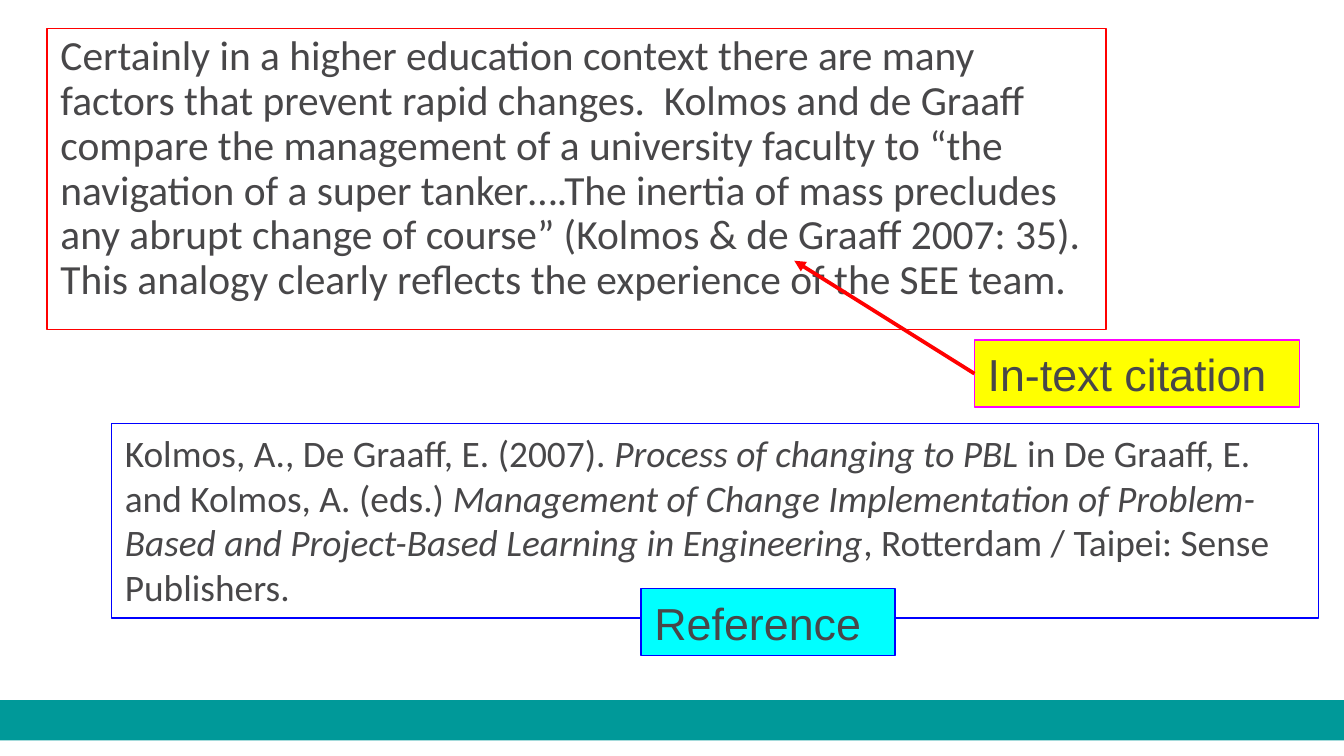
"""Build a slide that contrasts an in-text citation with its full reference."""
from dataclasses import dataclass
from typing import Optional

from lxml import etree
from pptx import Presentation
from pptx import util as u
from pptx.dml.color import RGBColor
from pptx.enum import shapes, text
from pptx.oxml import ns

TEAL = RGBColor(0x00, 0x99, 0x99)
RED = RGBColor(0xFF, 0x00, 0x00)
BLUE = RGBColor(0x00, 0x00, 0xFF)
YELLOW = RGBColor(0xFF, 0xFF, 0x00)
MAGENTA = RGBColor(0xFF, 0x00, 0xFF)
CYAN = RGBColor(0x00, 0xFF, 0xFF)
GREY = RGBColor(0x48, 0x47, 0x49)

QUOTATION = (
    "Certainly in a higher education context there are many factors that prevent "
    "rapid changes.  Kolmos and de Graaff compare the management of a university "
    "faculty to “the navigation of a super tanker….The inertia of mass precludes "
    "any abrupt change of course” (Kolmos & de Graaff 2007: 35).  This analogy "
    "clearly reflects the experience of the SEE team."
)


@dataclass(frozen=True)
class Span:
    words: str
    italic: bool = False


@dataclass(frozen=True)
class Panel:
    left: float
    top: float
    width: float
    height: float
    spans: tuple[Span, ...]
    font: str
    size: float
    outline: RGBColor
    fill: Optional[RGBColor] = None
    line_spacing: float = 1.0


QUOTE = Panel(0.35, 0.21, 7.88, 2.24, (Span(QUOTATION),), "Calibri", 22.2, RED,
              line_spacing=0.9)
REFERENCE = Panel(0.83, 3.15, 8.98, 1.45, (
    Span("Kolmos, A., De Graaff, E. (2007). "),
    Span("Process of changing to PBL ", italic=True),
    Span("in De Graaff, E. and Kolmos, A. (eds.) "),
    Span("Management of Change Implementation of Problem-Based and "
         "Project-Based Learning in Engineering", italic=True),
    Span(", Rotterdam / Taipei: Sense Publishers."),
), "Calibri", 20, BLUE)
CITATION_LABEL = Panel(7.25, 2.53, 2.42, 0.5, (Span("In-text citation"),),
                       "Arial", 24, MAGENTA, YELLOW)
REFERENCE_LABEL = Panel(4.77, 4.38, 1.89, 0.5, (Span("Reference"),),
                        "Arial", 24, BLUE, CYAN)


def add_span(para, words: str, *, font: str, size: float, italic: bool) -> None:
    run = para.add_run()
    run.text = words
    run.font.name = font
    run.font.size = u.Pt(size)
    run.font.italic = italic
    run.font.color.rgb = GREY


def format_panel(box, panel: Panel) -> None:
    box.left, box.top = u.Inches(panel.left), u.Inches(panel.top)
    box.width, box.height = u.Inches(panel.width), u.Inches(panel.height)
    box.line.color.rgb = panel.outline
    box.line.width = u.Pt(0.75)
    if panel.fill is not None:
        box.fill.solid()
        box.fill.fore_color.rgb = panel.fill
    frame = box.text_frame
    frame.word_wrap = True
    frame.auto_size = text.MSO_AUTO_SIZE.NONE
    frame.vertical_anchor = text.MSO_ANCHOR.TOP
    para = frame.paragraphs[0]
    para.alignment = text.PP_ALIGN.LEFT
    para.line_spacing = panel.line_spacing
    para.space_before = u.Pt(0)
    for span in panel.spans:
        add_span(para, span.words, font=panel.font, size=panel.size, italic=span.italic)


def add_panel(page, panel: Panel):
    box = page.shapes.add_textbox(0, 0, 0, 0)
    format_panel(box, panel)
    return box


def remove_bullet(para) -> None:
    properties = para._p.get_or_add_pPr()
    properties.set("marL", "0")
    properties.set("indent", "0")
    etree.SubElement(properties, ns.qn("a:buNone"))


def add_bar(page) -> None:
    bar = page.shapes.add_shape(shapes.MSO_SHAPE.RECTANGLE, 0, u.Inches(5.21),
                                u.Inches(10), u.Inches(0.3))
    bar.shadow.inherit = False
    bar.fill.solid()
    bar.fill.fore_color.rgb = TEAL
    bar.line.fill.background()


def add_arrow(page, label, tip_left: float, tip_top: float) -> None:
    arrow = page.shapes.add_connector(shapes.MSO_CONNECTOR.STRAIGHT, 0, 0,
                                      u.Inches(tip_left), u.Inches(tip_top))
    arrow.begin_connect(label, 1)
    arrow.line.color.rgb = RED
    arrow.line.width = u.Pt(2)
    etree.SubElement(arrow.line._get_or_add_ln(), ns.qn("a:tailEnd"), type="triangle")
    etree.SubElement(arrow._element.spPr, ns.qn("a:effectLst"))


def main() -> None:
    deck = Presentation()
    deck.slide_width, deck.slide_height = u.Inches(10), u.Inches(10 * 9 / 16)
    page = deck.slides.add_slide(deck.slide_layouts[1])
    title = page.shapes.title._element
    title.getparent().remove(title)

    add_bar(page)
    body = page.placeholders[1]
    remove_bullet(body.text_frame.paragraphs[0])
    format_panel(body, QUOTE)
    add_panel(page, REFERENCE)
    citation_label = add_panel(page, CITATION_LABEL)
    add_panel(page, REFERENCE_LABEL)
    add_arrow(page, citation_label, 5.91, 1.94)
    deck.save("out.pptx")


if __name__ == "__main__":
    main()
